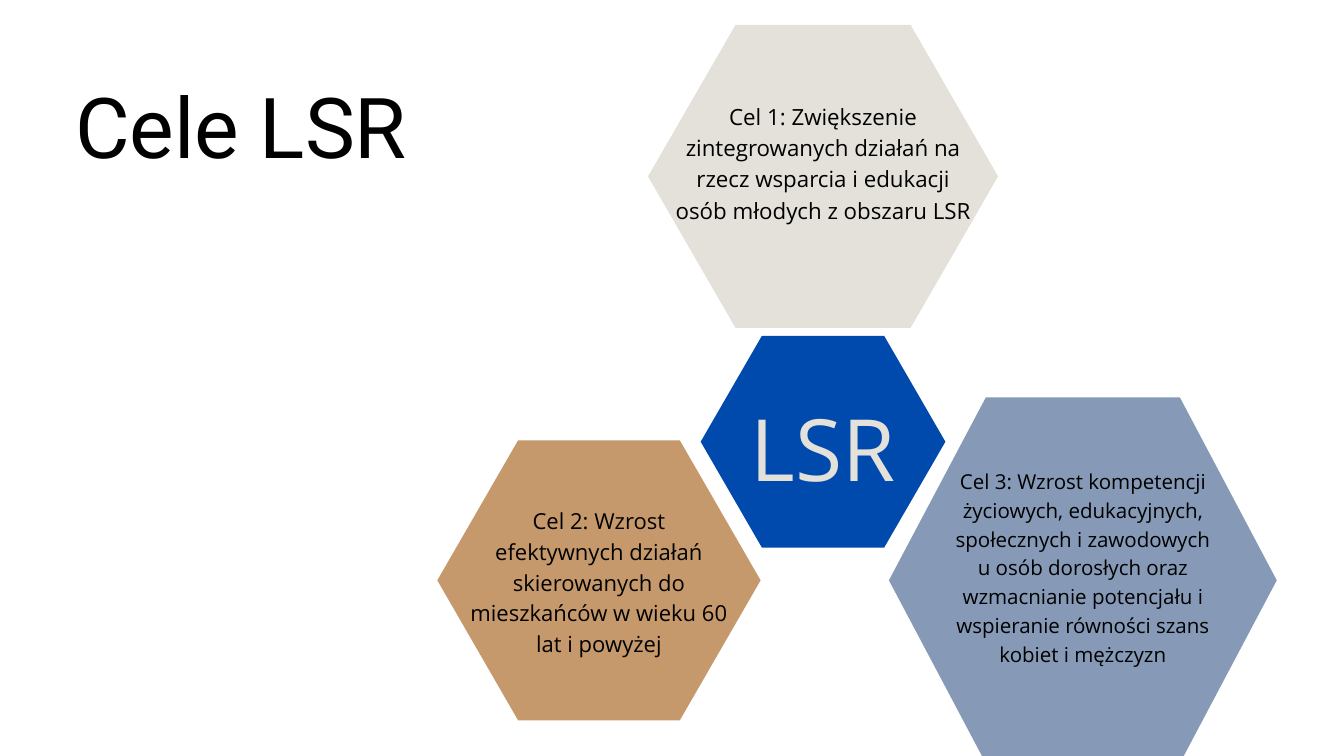
from dataclasses import dataclass

from pptx import Presentation
from pptx.dml.color import RGBColor
from pptx.enum.text import MSO_AUTO_SIZE as AutoSize, PP_ALIGN as Align
from pptx.slide import Slide
from pptx.util import Cm, Pt

BLACK, BLUE, SAND = "000000", "004AAD", "E4E1DA"
TAN, STEEL = "C6996C", "869AB7"
AXIS_X = 31.11   # shared by the LSR hexagon and the goal above it
LOWER_Y = 21.94  # shared by the two lower goals


def colour(code):
    return RGBColor.from_string(code)


def assign(target, values):
    for name, value in values.items():
        setattr(target, name, value)


@dataclass
class Canvas:
    slide: Slide
    body_font: str = "Open Sans"
    title_font: str = "Roboto"

    def text(self, words, left, top, width, height, size, spacing,
             ink=BLACK, font=None, align=Align.CENTER):
        box = self.slide.shapes.add_textbox(Cm(left), Cm(top), Cm(width), Cm(height))
        assign(box.text_frame, {
            "margin_left": 0, "margin_top": 0, "margin_right": 0, "margin_bottom": 0,
            "word_wrap": True, "auto_size": AutoSize.SHAPE_TO_FIT_TEXT})
        paragraph = box.text_frame.paragraphs[0]
        assign(paragraph, {"alignment": align, "line_spacing": Pt(spacing)})
        run = paragraph.add_run()
        run.text = words
        assign(run.font, {"name": font or self.body_font, "size": Pt(size)})
        run.font.color.rgb = colour(ink)

    def hexagon(self, x, y, width, height, fill):
        """Hexagon around a centre; its flat sides span half the width."""
        corners = [(Cm(x + dx * width), Cm(y + dy * height)) for dx, dy in (
            (0.5, 0), (0.25, 0.5), (-0.25, 0.5),
            (-0.5, 0), (-0.25, -0.5), (0.25, -0.5))]
        outline = self.slide.shapes.build_freeform(*corners[0])
        outline.add_line_segments(corners[1:], close=True)
        cell = outline.convert_to_shape()
        cell.shadow.inherit = False
        cell.fill.solid()
        cell.fill.fore_color.rgb = colour(fill)
        cell.line.fill.background()

    def goal(self, centre, extent, fill, words, text_top, text_extent, **style):
        x, y = centre
        width, height = text_extent
        self.hexagon(x, y, *extent, fill)
        self.text(words, x - width / 2, text_top, width, height, **style)


def main():
    deck = Presentation()
    assign(deck, {"slide_width": Cm(50.8), "slide_height": Cm(28.58)})
    canvas = Canvas(deck.slides.add_slide(deck.slide_layouts[6]))

    # Title
    canvas.text("Cele LSR", 2.84, 2.82, 22.53, 3.84, size=90, spacing=108,
                font=canvas.title_font, align=Align.LEFT)

    # Centre
    canvas.goal((AXIS_X, 16.7), (9.25, 8), BLUE, "LSR",
                14.3, (5.77, 4.34), size=92, spacing=128.8, ink=SAND)

    # Goals
    canvas.goal((AXIS_X, 6.67), (13.23, 11.46), SAND,
                "Cel 1: Zwiększenie zintegrowanych działań na rzecz wsparcia "
                "i edukacji osób młodych z obszaru LSR",
                3.73, (11.2, 5.82), size=23.9, spacing=33.5)
    canvas.goal((22.64, LOWER_Y), (12.22, 10.59), TAN,
                "Cel 2: Wzrost efektywnych działań skierowanych do mieszkańców "
                "w wieku 60 lat i powyżej",
                19.02, (10.06, 5.74), size=23.6, spacing=33)
    canvas.goal((40.93, LOWER_Y), (14.66, 13.84), STEEL,
                "Cel 3: Wzrost kompetencji życiowych, edukacyjnych, społecznych "
                "i zawodowych u osób dorosłych oraz wzmacnianie potencjału "
                "i wspieranie równości szans kobiet i mężczyzn",
                17.58, (10.11, 8.64), size=22, spacing=30.8)

    deck.save("out.pptx")


if __name__ == "__main__":
    main()
